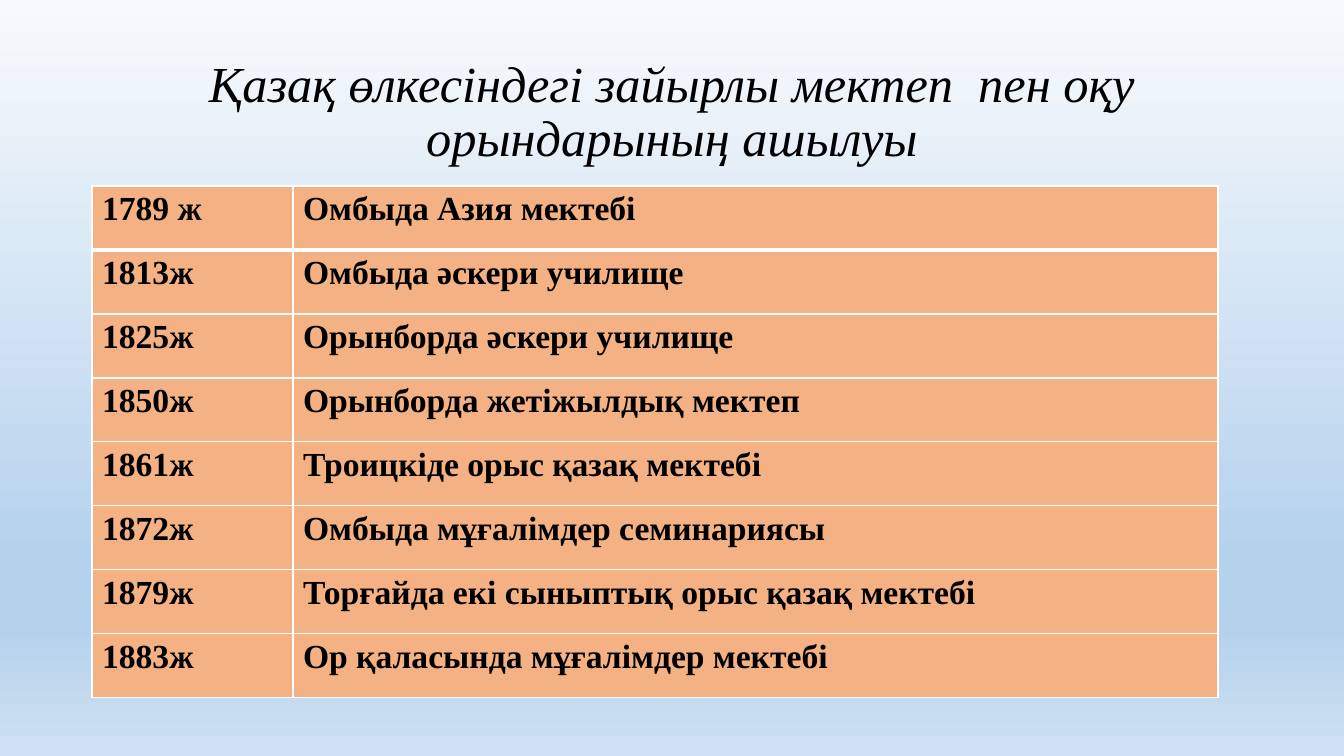
from dataclasses import dataclass
from typing import NamedTuple

from lxml.etree import SubElement as Sub
from pptx import Presentation
from pptx.dml.color import RGBColor as Rgb
from pptx.enum.text import MSO_ANCHOR as Anchor, PP_ALIGN as Align
from pptx.oxml.ns import qn
from pptx.slide import Slide
from pptx.table import _Cell as Cell
from pptx.text.text import TextFrame as Frame
from pptx.util import Emu, Pt


@dataclass(frozen=True)
class Theme:
    font: str = "Times New Roman"
    ink: str = "000000"
    fill: str = "F4B183"
    rule: str = "FFFFFF"
    sky: tuple = ((0, "F7FAFD"), (74, "B5D2EC"), (83, "B5D2EC"), (100, "CEE1F2"))
    head: int = 36
    body: int = 24
    thin: int = 1
    thick: int = 3


class Box(NamedTuple):
    x: int
    y: int
    w: int
    h: int


class School(NamedTuple):
    year: str
    name: str


THEME = Theme()
WIDE, HIGH = 1344, 756
TITLE_BOX = Box(92, 40, 1160, 146)
COLS = (201, 925)
ROW = 64
TITLE = "Қазақ өлкесіндегі зайырлы мектеп  пен оқу орындарының ашылуы"
SCHOOLS = (
    School("1789 ж", "Омбыда Азия мектебі"),
    School("1813ж", "Омбыда әскери училище"),
    School("1825ж", "Орынборда әскери училище"),
    School("1850ж", "Орынборда жетіжылдық мектеп"),
    School("1861ж", "Троицкіде орыс қазақ мектебі"),
    School("1872ж", "Омбыда мұғалімдер семинариясы"),
    School("1879ж", "Торғайда екі сыныптық орыс қазақ мектебі"),
    School("1883ж", "Ор қаласында мұғалімдер мектебі"),
)
GRID_BOX = Box(92, 186, sum(COLS), ROW * len(SCHOOLS))


def px(n: int) -> Emu:
    return Emu(round(n * 12192000 / WIDE))


def write(frame: Frame, text: str, *, size: int, bold: bool = False,
          italic: bool = False, align: Align = Align.LEFT,
          anchor: Anchor = Anchor.TOP, space: float = 1.0) -> None:
    frame.word_wrap = True
    frame.vertical_anchor = anchor
    para = frame.paragraphs[0]
    para.alignment, para.line_spacing = align, space
    run = para.add_run()
    run.text = text
    font = run.font
    font.name, font.size, font.bold, font.italic = THEME.font, Pt(size), bold, italic
    font.color.rgb = Rgb.from_string(THEME.ink)


def paint(slide: Slide) -> None:
    """Fill the background from top to bottom."""
    fill = slide.background.fill
    fill.gradient()
    fill.gradient_angle = 270
    stops = next(slide.element.iter(qn("a:gsLst")))
    for old in list(stops):
        stops.remove(old)
    for pos, tint in THEME.sky:
        stop = Sub(stops, qn("a:gs"), pos=str(pos * 1000))
        Sub(stop, qn("a:srgbClr"), val=tint)


def edge(cell: Cell, row: int) -> None:
    """Rule a cell, with a heavy line under the first row."""
    props = cell._tc.get_or_add_tcPr()
    for side in "LRTB":
        heavy = (row, side) in ((0, "B"), (1, "T"))
        width = Pt(THEME.thick if heavy else THEME.thin)
        line = Sub(props, qn(f"a:ln{side}"), w=str(width))
        Sub(Sub(line, qn("a:solidFill")), qn("a:srgbClr"), val=THEME.rule)


def add_grid(slide: Slide, box: Box, schools: tuple[School, ...]) -> None:
    grid = slide.shapes.add_table(len(schools), len(COLS), *map(px, box)).table
    for col, width in zip(grid.columns, COLS):
        col.width = px(width)
    for r, school in enumerate(schools):
        grid.rows[r].height = px(ROW)
        for c, text in enumerate(school):
            cell = grid.cell(r, c)
            edge(cell, r)
            cell.fill.solid()
            cell.fill.fore_color.rgb = Rgb.from_string(THEME.fill)
            write(cell.text_frame, text, size=THEME.body, bold=True)


def main() -> None:
    deck = Presentation()
    deck.slide_width, deck.slide_height = px(WIDE), px(HIGH)
    slide = deck.slides.add_slide(deck.slide_layouts[5])
    paint(slide)

    # Title
    title = slide.shapes.title
    title.left, title.top, title.width, title.height = map(px, TITLE_BOX)
    write(title.text_frame, TITLE, size=THEME.head, italic=True,
          align=Align.CENTER, anchor=Anchor.MIDDLE, space=0.9)

    # Schools by year
    add_grid(slide, GRID_BOX, SCHOOLS)
    deck.save("out.pptx")


if __name__ == "__main__":
    main()
